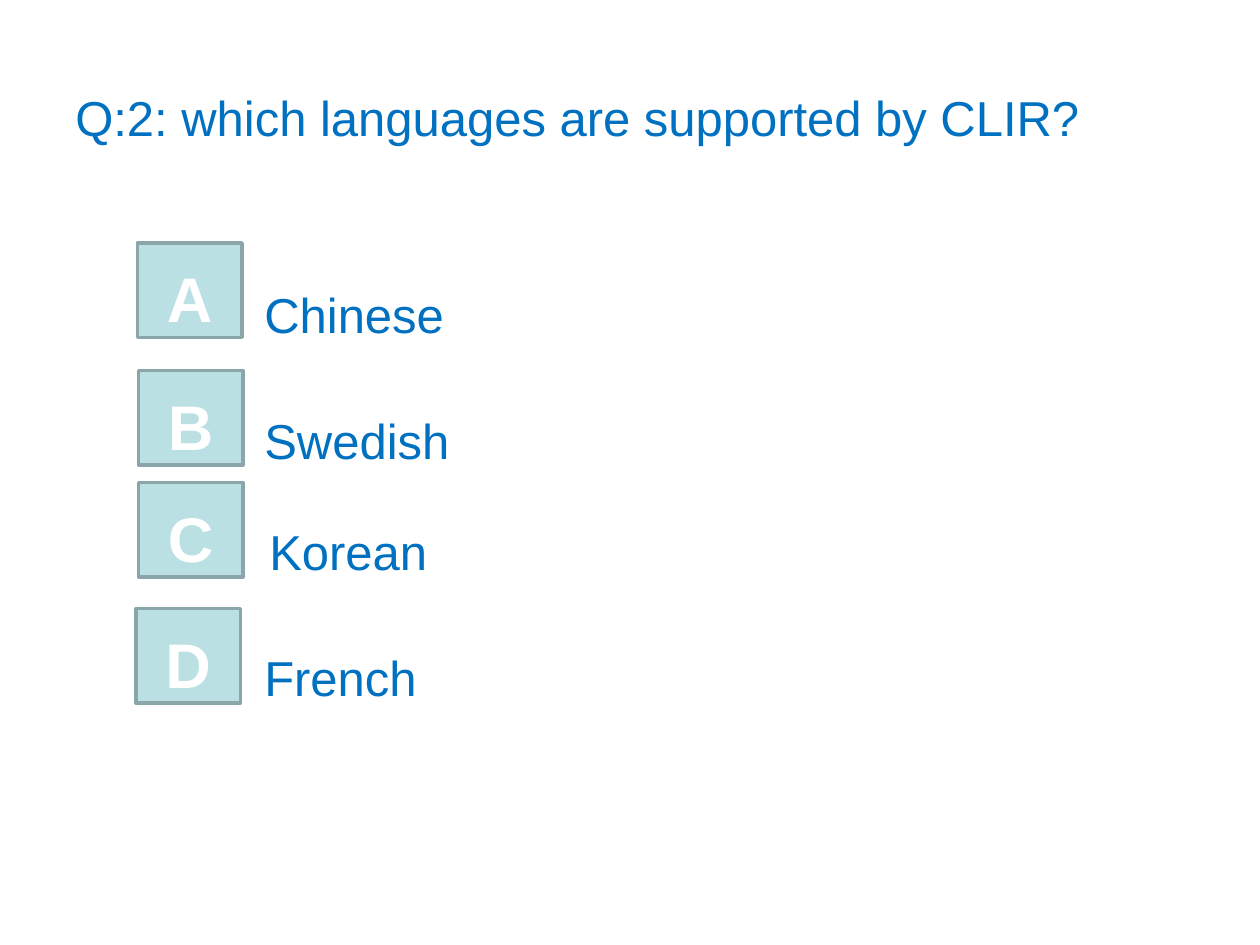
from pptx import Presentation
from pptx.dml.color import RGBColor
from pptx.enum.shapes import MSO_SHAPE
from pptx.enum.text import MSO_ANCHOR, PP_ALIGN
from pptx.util import Cm, Pt

BUTTON = MSO_SHAPE.ACTION_BUTTON_CUSTOM
MIDDLE, TOP = MSO_ANCHOR.MIDDLE, MSO_ANCHOR.TOP
LEFT, CENTER = PP_ALIGN.LEFT, PP_ALIGN.CENTER
BLUE = RGBColor(0x00, 0x70, 0xC0)
WHITE = RGBColor(0xFF, 0xFF, 0xFF)
PALE_TEAL = RGBColor(0xBB, 0xE0, 0xE3)
GREY_TEAL = RGBColor(0x8A, 0xA6, 0xA8)
FONT = "Arial"

ANSWERS = [
    ("A", 2.77, 4.9, "Chinese", 5.08, 5.54, 8.46, 1.4),
    ("B", 2.79, 7.47, "Swedish", 5.08, 8.08, 9.09, 1.45),
    ("C", 2.79, 9.73, "Korean", 5.18, 10.31, 7.52, 1.57),
    ("D", 2.74, 12.27, "French", 5.08, 12.85, 7.62, 1.57),
]


def write(s, text, size, color, anchor=TOP, align=LEFT, bold=False):
    tf = s.text_frame
    tf.word_wrap = True
    tf.vertical_anchor = anchor
    p = tf.paragraphs[0]
    p.alignment = align
    r = p.add_run()
    r.text = text
    r.font.name = FONT
    r.font.size = Pt(size)
    r.font.bold = bold
    r.font.color.rgb = color
    return tf


def add_text(sp, text, x, y, w, h, anchor=TOP):
    s = sp.add_textbox(Cm(x), Cm(y), Cm(w), Cm(h))
    return write(s, text, 28, BLUE, anchor)


def add_button(sp, letter, x, y):
    s = sp.add_shape(BUTTON, Cm(x), Cm(y), Cm(2.11), Cm(1.9))
    s.shadow.inherit = False
    s.fill.solid()
    s.fill.fore_color.rgb = PALE_TEAL
    s.line.color.rgb = GREY_TEAL
    s.line.width = Pt(2)
    tf = write(s, letter, 36, WHITE, MIDDLE, CENTER, True)
    tf.margin_top, tf.margin_bottom = Cm(0.3), Cm(0)


def main():
    prs = Presentation()
    prs.slide_width, prs.slide_height = Cm(25.4), Cm(19.05)
    sp = prs.slides.add_slide(prs.slide_layouts[6]).shapes
    add_text(sp, "Q:2: which languages are supported by CLIR?",
             1.27, 0.76, 22.86, 3.18, MIDDLE)
    for letter, bx, by, answer, x, y, w, h in ANSWERS:
        add_button(sp, letter, bx, by)
        tf = add_text(sp, answer, x, y, w, h)
        tf.margin_top = Cm(0.2)
    prs.save("out.pptx")


if __name__ == "__main__":
    main()
